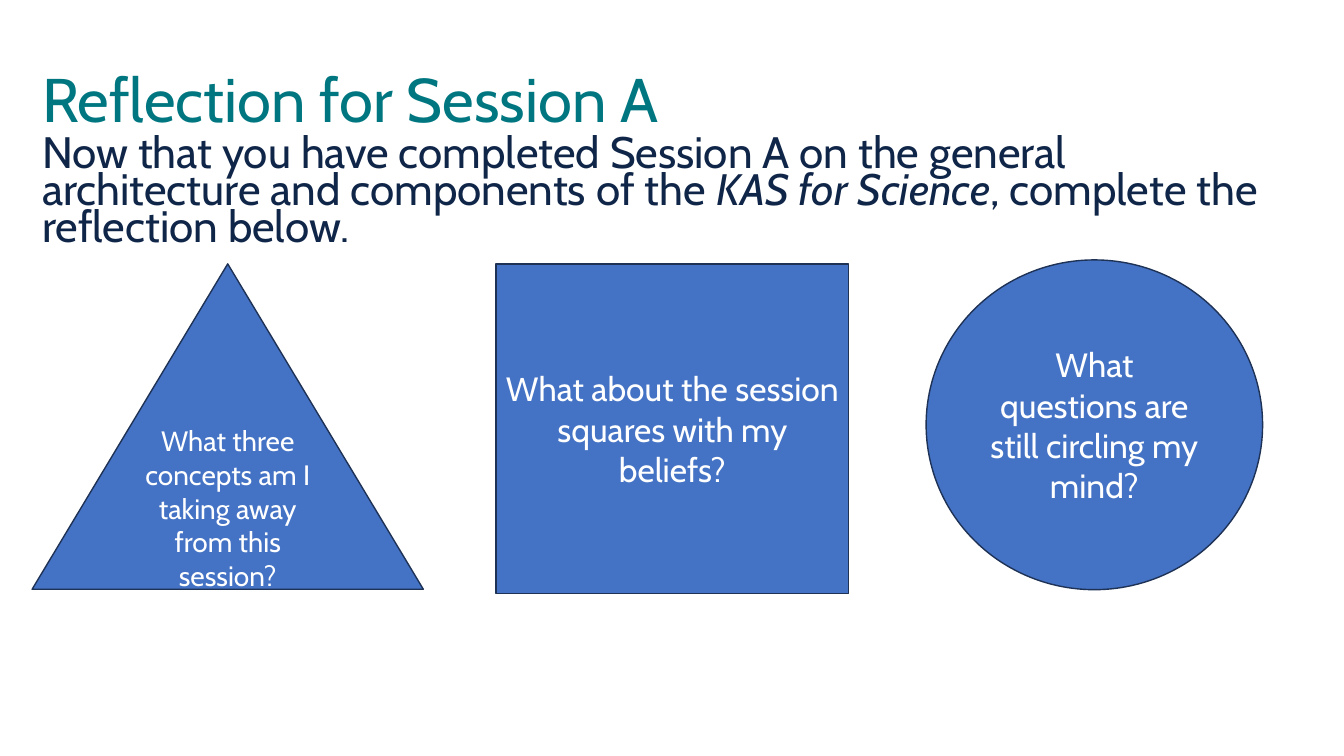
from dataclasses import dataclass

from pptx import Presentation
from pptx import util as u
from pptx.dml.color import RGBColor
from pptx.enum import shapes, text

TEAL = RGBColor(0x00, 0x77, 0x80)
NAVY = RGBColor(0x10, 0x26, 0x49)
BLUE = RGBColor(0x44, 0x72, 0xC4)
OUTLINE = RGBColor(0x1E, 0x32, 0x56)
WHITE = RGBColor(0xFF, 0xFF, 0xFF)
FONT = "Cabin"
LEFT = 0.81


@dataclass(frozen=True)
class Box:
    """Position and size in centimetres."""
    left: float
    top: float
    width: float
    height: float

    def lengths(self) -> list[u.Cm]:
        return [u.Cm(n) for n in (self.left, self.top, self.width, self.height)]


@dataclass(frozen=True)
class Prompt:
    outline: shapes.MSO_SHAPE
    box: Box
    question: str
    size: float = 24


def write(frame, *parts: str, size: float, color: RGBColor, spacing: float = 1.0,
          align=text.PP_ALIGN.LEFT, anchor=text.MSO_ANCHOR.MIDDLE,
          italic_part: str = "") -> None:
    """Fill a text frame with one paragraph made of the given parts."""
    frame.word_wrap = True
    frame.vertical_anchor = anchor
    paragraph = frame.paragraphs[0]
    paragraph.alignment = align
    paragraph.line_spacing = spacing
    for part in parts:
        run = paragraph.add_run()
        run.text = part
        run.font.name = FONT
        run.font.size = u.Pt(size)
        run.font.color.rgb = color
        run.font.italic = part == italic_part


def draw_prompt(slide, prompt: Prompt) -> None:
    """Draw a reflection question inside its shape."""
    figure = slide.shapes.add_shape(prompt.outline, *prompt.box.lengths())
    figure.shadow.inherit = False
    figure.fill.solid()
    figure.fill.fore_color.rgb = BLUE
    figure.line.color.rgb = OUTLINE
    figure.line.width = u.Pt(1)
    write(figure.text_frame, prompt.question, size=prompt.size, color=WHITE,
          align=text.PP_ALIGN.CENTER)


PROMPTS = [
    Prompt(shapes.MSO_SHAPE.ISOSCELES_TRIANGLE, Box(LEFT, 6.65, 9.86, 8.2),
           "What three concepts am I taking away from this session?", size=20),
    Prompt(shapes.MSO_SHAPE.RECTANGLE, Box(12.5, 6.65, 8.89, 8.31),
           "What about the session squares with my beliefs?"),
    Prompt(shapes.MSO_SHAPE.OVAL, Box(23.34, 6.55, 8.48, 8.31),
           "What questions are still circling my mind?"),
]


def main() -> None:
    deck = Presentation()
    deck.slide_width, deck.slide_height = u.Cm(33.87), u.Cm(19.05)
    slide = deck.slides.add_slide(deck.slide_layouts[6])

    # Heading
    heading = slide.shapes.add_textbox(*Box(LEFT, 0.76, 23.88, 3.66).lengths())
    write(heading.text_frame, "Reflection for Session A", size=44, color=TEAL,
          spacing=0.9)

    # Instructions
    standards = "KAS for Science"
    instructions = slide.shapes.add_textbox(*Box(LEFT, 3.38, 31.39, 3.15).lengths())
    write(instructions.text_frame,
          "Now that you have completed Session A on the general architecture "
          "and components of the ",
          standards, ", complete the reflection below.",
          size=31.4, color=NAVY, spacing=0.7, anchor=text.MSO_ANCHOR.TOP,
          italic_part=standards)

    # Reflection questions
    for prompt in PROMPTS:
        draw_prompt(slide, prompt)

    deck.save("out.pptx")


if __name__ == "__main__":
    main()
